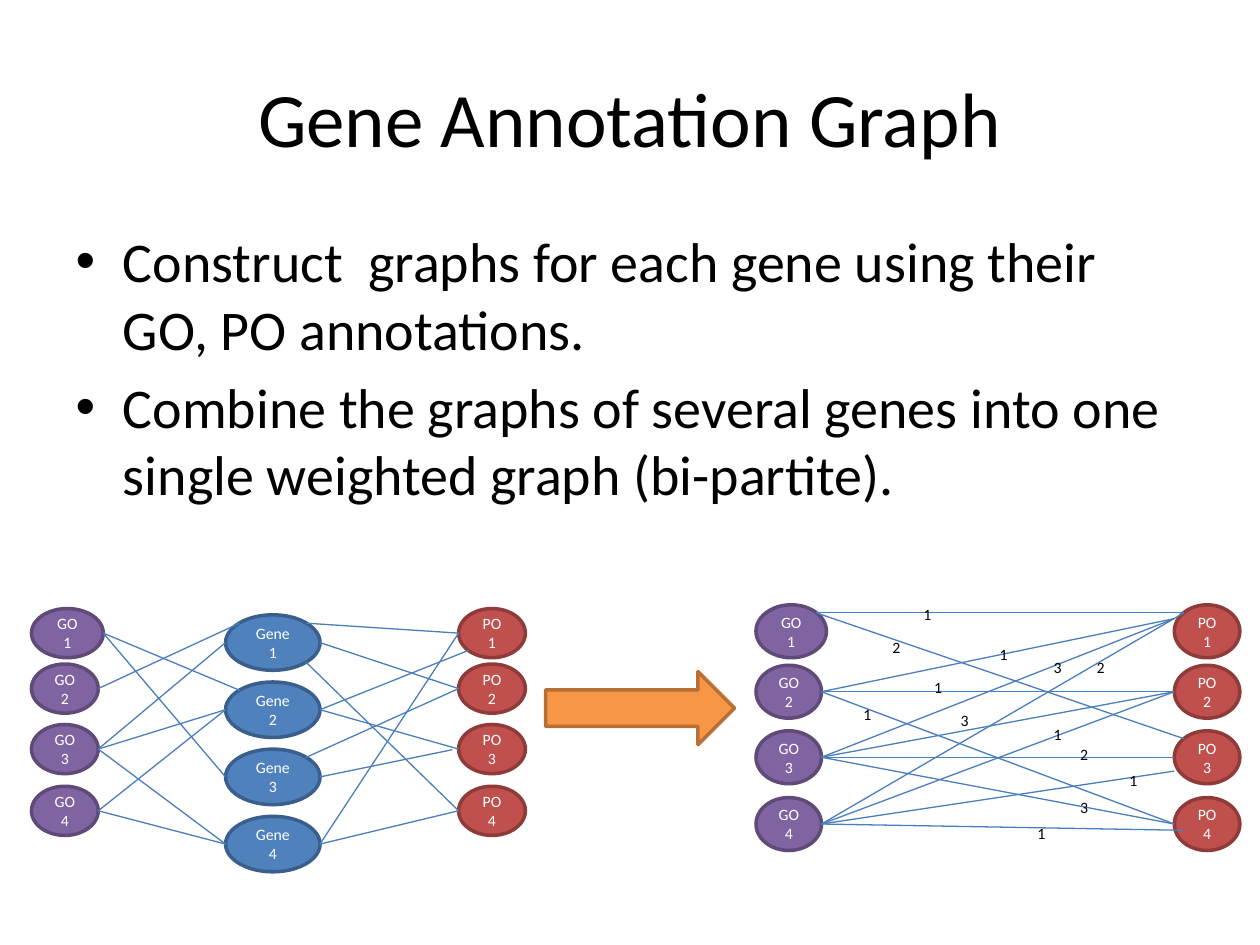
import pptx
import pptx.util
import pptx.dml.color
import pptx.enum.shapes
import pptx.enum.text
import pptx.oxml
from pptx.util import Inches

SHAPE = pptx.enum.shapes.MSO_SHAPE
CENTER = pptx.enum.text.PP_ALIGN.CENTER
MIDDLE = pptx.enum.text.MSO_ANCHOR.MIDDLE
PURPLE, BLUE, RED = ("8064A2", "5F4A78"), ("4F81BD", "3A5F8C"), ("C0504D", "8E3B39")

# Connection sites of an ellipse, as fractions of its width and height
SITES = {"left": (0, 0.5), "right": (1, 0.5),
         "upper left": (0.15, 0.15), "upper right": (0.85, 0.15),
         "lower left": (0.15, 0.85), "lower right": (0.85, 0.85)}


def color(value):
    return pptx.dml.color.RGBColor.from_string(value)


def style(item, size, font_color, alignment=None):
    for para in item.text_frame.paragraphs:
        para.alignment = alignment
        for span in para.runs:
            span.font.size = pptx.util.Pt(size)
            span.font.name = "Calibri"
            span.font.color.rgb = color(font_color)


deck = pptx.Presentation()
deck.slide_width, deck.slide_height = Inches(10), Inches(7.5)
page = deck.slides.add_slide(deck.slide_layouts[1])

# Title and bullets
title, body = page.placeholders
title.left, title.top, title.width, title.height = map(Inches, (0.5, 0.3, 9, 1.25))
title.text_frame.text = "Gene Annotation Graph"
style(title, 44, "000000", CENTER)

body.left, body.top, body.width, body.height = map(Inches, (0.5, 1.75, 9, 4.95))
body.text_frame.text = "Construct  graphs for each gene using their GO, PO annotations."
body.text_frame.add_paragraph().text = (
    "Combine the graphs of several genes into one single weighted graph (bi-partite).")
style(body, 32, "000000")

# Node columns: name, colours, left, width, height, tops
gene_tops = [4.88 + 0.533 * row for row in range(4)]
left_tops = [4.83, 5.27, 5.75, 6.24]
right_tops = [4.8, 5.28, 5.8, 6.33]
gene_columns = [("Gene", BLUE, 1.79, 0.75, 0.44, gene_tops),
                ("GO", PURPLE, 0.25, 0.53, 0.39, left_tops),
                ("PO", RED, 3.64, 0.53, 0.39, left_tops)]
weighted_columns = [("GO", PURPLE, 6, 0.52, 0.42, right_tops),
                    ("PO", RED, 9.32, 0.52, 0.42, right_tops)]

# Edges: start node, end node, then sites or free end points where they differ
# from right side to left side
gene_edges = [
    ("GO 1", "Gene 2", "right", "upper left"), ("GO 3", "Gene 1"),
    ("GO 4", "Gene 2"), ("GO 2", "Gene 1", "right", "upper left"),
    ("GO 3", "Gene 4"), ("GO 3", "Gene 2"), ("GO 1", "Gene 3"), ("GO 4", "Gene 4"),
    ("Gene 1", "PO 2"), ("Gene 2", "PO 1", "right", "lower left"),
    ("Gene 4", "PO 1"), ("Gene 2", "PO 3"), ("Gene 1", "PO 4", "lower right"),
    ("Gene 1", "PO 1", "upper right"), ("Gene 4", "PO 4"),
    ("Gene 3", "PO 3", "right", (3.59, 5.95)), ("Gene 3", "PO 2", "upper right")]
weighted_edges = [
    ("GO 3", "PO 1", "right", (9.32, 4.91)), ("GO 4", "PO 1", "right", "upper left"),
    ("GO 2", "PO 1", "right", (9.32, 4.91)),
    ("GO 1", "PO 1", "upper right", "upper left"),
    ("GO 1", "PO 3", "upper right", "upper left"),
    ("GO 2", "PO 2"), ("GO 2", "PO 4"), ("GO 3", "PO 2"), ("GO 3", "PO 4"),
    ("GO 3", "PO 3"), ("GO 4", "PO 2"), ("GO 4", "PO 3", "right", (9.32, 6.12)),
    ("GO 4", "PO 4", "right", (9.4, 6.59))]

# Edge weights: text, left, top, width
weights = [("1", 7.25, 4.75, 0.22), ("2", 7.03, 5.01, 0.17), ("1", 7.9, 5.07, 0.13),
           ("1", 7.38, 5.33, 0.13), ("1", 6.82, 5.54, 0.13), ("3", 8.33, 5.17, 0.13),
           ("3", 7.59, 5.59, 0.13), ("2", 8.54, 5.86, 0.13), ("3", 8.54, 6.28, 0.13),
           ("1", 8.2, 6.49, 0.13), ("1", 8.93, 6.07, 0.13), ("1", 8.33, 5.7, 0.13),
           ("2", 8.67, 5.17, 0.13)]

# Both graphs
for columns, edges, labels in ((gene_columns, gene_edges, []),
                               (weighted_columns, weighted_edges, weights)):
    graph = page.shapes.add_group_shape().shapes
    nodes = {}
    for name, (fill, outline), left, width, height, tops in columns:
        for number, top in enumerate(tops, 1):
            text = f"{name} {number}"
            # The first GO node is slightly wider
            node_width = width + 0.04 if text == "GO 1" else width
            nodes[text] = (left, top, node_width, height)
            node = graph.add_shape(SHAPE.OVAL, *map(Inches, nodes[text]))
            node.shadow.inherit = False
            node.fill.solid()
            node.fill.fore_color.rgb = color(fill)
            node.line.color.rgb = color(outline)
            node.line.width = pptx.util.Pt(2)
            node.text_frame.text = text
            node.text_frame.word_wrap = True
            node.text_frame.vertical_anchor = MIDDLE
            style(node, 9, "FFFFFF", CENTER)

    for start, end, *sites in edges:
        sites += ["right", "left"][len(sites):]
        points = []
        for name, site in zip((start, end), sites):
            if site in SITES:
                left, top, width, height = nodes[name]
                across, down = SITES[site]
                site = (left + across * width, top + down * height)
            points += map(Inches, site)
        edge = graph.add_connector(pptx.enum.shapes.MSO_CONNECTOR.STRAIGHT, *points)
        edge.line.color.rgb = color("4B7EBC")
        edge.line.width = pptx.util.Pt(0.75)
        edge._element.spPr.append(pptx.oxml.parse_xml(
            '<a:effectLst xmlns:a="http://schemas.openxmlformats.org/drawingml/2006/main"/>'))

    for text, left, top, width in labels:
        box = graph.add_textbox(*map(Inches, (left, top, width, 0.25)))
        box.text_frame.text = text
        box.text_frame.word_wrap = True
        box.text_frame.margin_left = box.text_frame.margin_right = 0
        style(box, 9, "000000", CENTER)

# Arrow between the graphs
arrow = page.shapes.add_shape(SHAPE.RIGHT_ARROW, *map(Inches, (4.33, 5.33, 1.5, 0.58)))
arrow.shadow.inherit = False
arrow.fill.solid()
arrow.fill.fore_color.rgb = color("F79646")
arrow.line.color.rgb = color("B76F34")
arrow.line.width = pptx.util.Pt(2)

deck.save("out.pptx")
